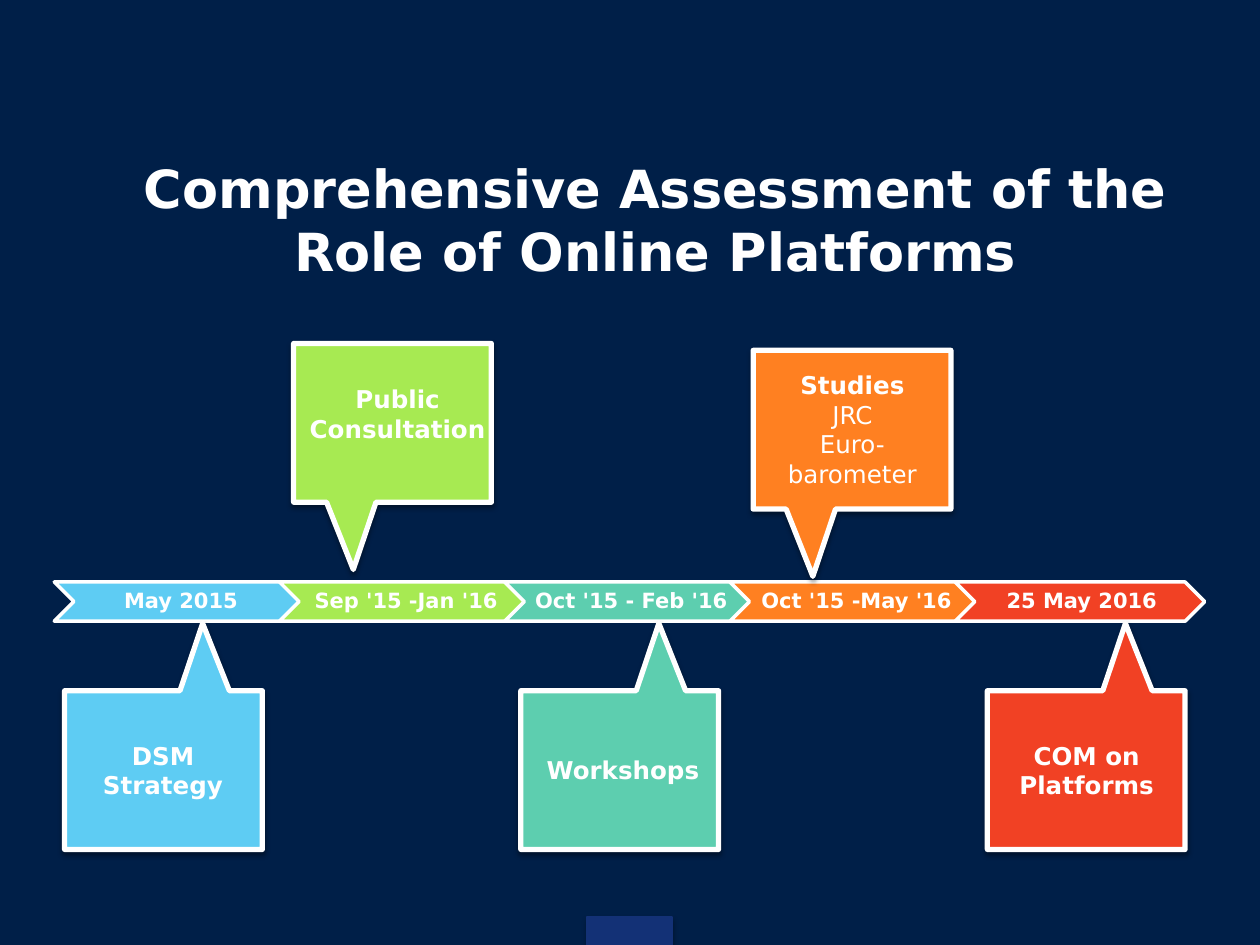
from lxml.etree import SubElement
from pptx import Presentation
from pptx.dml.color import RGBColor
from pptx.enum.shapes import MSO_SHAPE as Shape
from pptx.enum.text import MSO_ANCHOR as Anchor, PP_ALIGN as Align
from pptx.oxml.ns import qn
from pptx.util import Pt

NAVY = RGBColor(0x00, 0x1F, 0x48)
BLUE = RGBColor(0x13, 0x31, 0x76)
SKY = RGBColor(0x5E, 0xCC, 0xF3)
LIME = RGBColor(0xA7, 0xEA, 0x52)
TEAL = RGBColor(0x5D, 0xCE, 0xAF)
ORANGE = RGBColor(0xFF, 0x80, 0x21)
RED = RGBColor(0xF1, 0x41, 0x24)
WHITE = RGBColor(0xFF, 0xFF, 0xFF)

STEPS = [
    ("May 2015", SKY),
    ("Sep '15 -Jan '16", LIME),
    ("Oct '15 - Feb '16", TEAL),
    ("Oct '15 -May '16", ORANGE),
    ("25 May 2016", RED),
]
CARD_W, CARD_H = 113, 90.7
# left, top, turned upside down, colour
CARDS = [
    (36.9, 394.7, True, SKY),
    (167.8, 196.3, False, LIME),
    (297.6, 394.7, True, TEAL),
    (564.2, 394.7, True, RED),
    (430.4, 200.2, False, ORANGE),
]
# lines, left, top, width, height
NOTES = [
    (["DSM Strategy"], 36.7, 419.8, 113, 41),
    (["Public Consultation"], 167.8, 216, 118.8, 41),
    (["Workshops"], 299.5, 428, 113, 24.5),
    (["COM on", "Platforms"], 564.5, 419.8, 113, 41),
    (["Studies", "JRC", "Euro-barometer"], 430.6, 208.1, 113, 75),
]


class Board:
    font = "DejaVu Sans"

    def __init__(self, slide):
        self.slide = slide
        fill = slide.background.fill
        fill.solid()
        fill.fore_color.rgb = NAVY

    def letter(self, frame, lines, size):
        """Fill a frame with centred bold white paragraphs."""
        frame.word_wrap = True
        for i, line in enumerate(lines):
            para = frame.paragraphs[0] if i == 0 else frame.add_paragraph()
            para.text = line
            para.alignment = Align.CENTER
            font = para.font
            font.name, font.size, font.bold = self.font, Pt(size), True
            font.color.rgb = WHITE
        return frame

    def title(self, text, *box):
        shape = self.slide.shapes.title
        shape.left, shape.top, shape.width, shape.height = map(Pt, box)
        frame = self.letter(shape.text_frame, [text], 30)
        frame.vertical_anchor = Anchor.MIDDLE
        props = frame.paragraphs[0]._p.get_or_add_pPr()
        props.set("marL", str(Pt(28)))

    def text(self, lines, size, *box):
        shape = self.slide.shapes.add_textbox(*map(Pt, box))
        return self.letter(shape.text_frame, lines, size)

    def shape(self, kind, box, fill, line, weight):
        shape = self.slide.shapes.add_shape(kind, *map(Pt, box))
        shape.shadow.inherit = False
        shape.fill.solid()
        shape.fill.fore_color.rgb = fill
        shape.line.color.rgb = line
        shape.line.width = Pt(weight)
        return shape

    def shade(self, shape, alpha, dist):
        """Add a soft black shadow straight below the shape."""
        effects = shape._element.spPr.find(qn("a:effectLst"))
        shadow = SubElement(effects, qn("a:outerShdw"), blurRad=str(Pt(3.1)),
                            dist=str(Pt(dist)), dir="5400000", rotWithShape="0")
        color = SubElement(shadow, qn("a:srgbClr"), val="000000")
        SubElement(color, qn("a:alpha"), val=str(alpha * 1000))

    def tab(self, *box):
        self.shade(self.shape(Shape.RECTANGLE, box, BLUE, BLUE, 0.75), 35, 1.8)

    def step(self, label, fill, left, top, width, height):
        self.shape(Shape.CHEVRON, (left, top, width, height), fill, WHITE, 2)
        inset = height / 2
        frame = self.text([label], 12, left + inset, top, width - 2 * inset, height)
        frame.vertical_anchor = Anchor.MIDDLE
        frame.margin_left = Pt(3.6)
        frame.margin_right = frame.margin_top = frame.margin_bottom = Pt(1.4)
        frame.paragraphs[0].line_spacing = 0.9

    def card(self, left, top, turned, fill):
        box = left, top, CARD_W, CARD_H
        shape = self.shape(Shape.RECTANGULAR_CALLOUT, box, fill, WHITE, 3)
        shape.adjustments[0], shape.adjustments[1] = -0.198, 0.924
        shape.rotation = 180 if turned else 0
        self.shade(shape, 38, 1.6)


def main():
    deck = Presentation()
    deck.slide_width, deck.slide_height = Pt(720), Pt(540)
    board = Board(deck.slides.add_slide(deck.slide_layouts[5]))
    board.tab(335.5, 524, 48.5, 16)
    board.title("Comprehensive Assessment of the Role of Online Platforms",
                36.7, 88.6, 648, 73.4)
    for i, (label, fill) in enumerate(STEPS):
        board.step(label, fill, 31 + 128.7 * i, 332.6, 142.6, 22.4)
    for card in CARDS:
        board.card(*card)
    for lines, *box in NOTES:
        frame = board.text(lines, 14, *box)
        if lines[0] == "Studies":
            for para in frame.paragraphs[1:]:
                para.font.bold = False
    deck.save("out.pptx")


if __name__ == "__main__":
    main()
